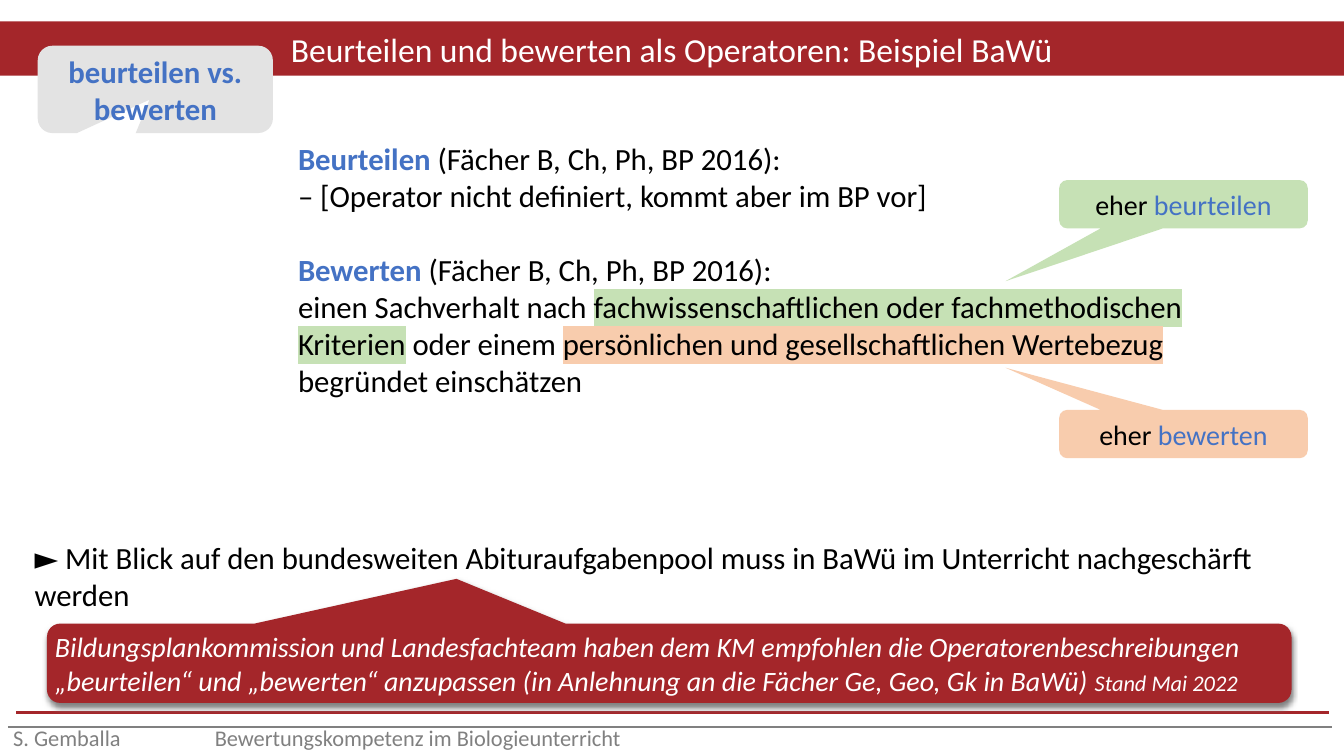
"""Build the slide on the operators beurteilen and bewerten."""
from dataclasses import dataclass
from lxml.etree import SubElement
from pptx import Presentation
from pptx.dml.color import RGBColor
from pptx.enum.shapes import MSO_CONNECTOR, MSO_SHAPE
from pptx.enum.text import MSO_ANCHOR, PP_ALIGN
from pptx.oxml import parse_xml
from pptx.oxml.ns import nsdecls, qn
from pptx.util import Pt


@dataclass(frozen=True)
class Theme:
    font: str = "Calibri"
    red: str = "A4262A"
    blue: str = "4472C4"
    green: str = "C6E1B5"
    peach: str = "F8CCAD"
    light: str = "E3E3E3"
    gray: str = "808080"
    black: str = "000000"
    white: str = "FFFFFF"
    title: float = 18
    body: float = 16.5
    label: float = 15
    small: float = 12


@dataclass(frozen=True)
class Piece:
    text: str
    color: str = Theme.black
    bold: bool = False
    italic: bool = False
    mark: str = ""
    size: float = 0


class Painter:
    def __init__(self, slide, theme):
        self.slide = slide
        self.theme = theme

    def style(self, run, piece, size):
        font = run.font
        font.name = self.theme.font
        font.size = Pt(piece.size or size)
        font.bold, font.italic = piece.bold, piece.italic
        font.color.rgb = RGBColor.from_string(piece.color)
        if piece.mark:
            fill = run._r.rPr.find(qn("a:solidFill"))
            fill.addnext(parse_xml(
                f'<a:highlight {nsdecls("a")}><a:srgbClr val="{piece.mark}"/></a:highlight>'))

    def letter(self, par, pieces, size, align=PP_ALIGN.LEFT):
        par.alignment = align
        par.text = pieces[0].text
        for piece in pieces[1:]:
            par.add_run().text = piece.text
        for run, piece in zip(par.runs, pieces):
            self.style(run, piece, size)

    def text(self, box, rows, size):
        frame = self.slide.shapes.add_textbox(*map(Pt, box)).text_frame
        frame.word_wrap = True
        for i, row in enumerate(rows):
            par = frame.add_paragraph() if i else frame.paragraphs[0]
            self.letter(par, row, size)
        return frame

    def block(self, kind, box, fill, pieces, size, align=PP_ALIGN.CENTER):
        shape = self.slide.shapes.add_shape(kind, *map(Pt, box))
        shape.shadow.inherit = False
        shape.fill.solid()
        shape.fill.fore_color.rgb = RGBColor.from_string(fill)
        shape.line.fill.background()
        shape.text_frame.vertical_anchor = MSO_ANCHOR.MIDDLE
        self.letter(shape.text_frame.paragraphs[0], pieces, size, align)
        return shape

    def callout(self, box, tip, *args):
        shape = self.block(MSO_SHAPE.ROUNDED_RECTANGULAR_CALLOUT, box, *args)
        shape.adjustments[0], shape.adjustments[1] = tip
        return shape

    def shade(self, shape):
        effect = shape._element.spPr.find(qn("a:effectLst"))
        effect.append(parse_xml(
            f'<a:outerShdw {nsdecls("a")} blurRad="{Pt(3.1)}" dist="{Pt(1.8)}" '
            f'dir="5400000" rotWithShape="0"><a:srgbClr val="{self.theme.gray}"/></a:outerShdw>'))

    def pad(self, frame, gap):
        frame.margin_left = frame.margin_right = Pt(gap)
        frame.margin_top = frame.margin_bottom = Pt(gap)

    def rule(self, left, right, y, color, width):
        line = self.slide.shapes.add_connector(
            MSO_CONNECTOR.STRAIGHT, Pt(left), Pt(y), Pt(right), Pt(y))
        line.line.color.rgb = RGBColor.from_string(color)
        line.line.width = Pt(width)
        SubElement(line._element.spPr, qn("a:effectLst"))

    def tab(self, par, pos):
        props = par._p.get_or_add_pPr()
        stops = SubElement(props, qn("a:tabLst"))
        SubElement(stops, qn("a:tab"), pos=str(Pt(pos)), algn="l")


def main():
    deck = Presentation()
    deck.slide_width, deck.slide_height = Pt(720), Pt(405)
    look = Theme()
    art = Painter(deck.slides.add_slide(deck.slide_layouts[6]), look)

    footer = art.text((0, 384.5, 720, 36), [
        [Piece("S. Gemballa\tBewertungskompetenz im Biologieunterricht", look.gray)],
    ], look.small)
    art.tab(footer.paragraphs[0], 108)
    art.rule(4.3, 713.5, 389.5, look.gray, 1)

    art.block(MSO_SHAPE.RECTANGLE, (0, 11.5, 720, 29), look.red, [
        Piece("Beurteilen und bewerten als Operatoren: Beispiel BaWü", look.white),
    ], look.title)

    source = Piece("(Fächer B, Ch, Ph, BP 2016):")
    body = art.text((152.6, 71.3, 511.2, 146.9), [
        [Piece("Beurteilen ", look.blue, bold=True), source],
        [Piece("– [Operator nicht definiert, kommt aber im BP vor]")],
        [Piece("Bewerten ", look.blue, bold=True), source],
        [Piece("einen Sachverhalt nach "),
         Piece("fachwissenschaftlichen oder fachmethodischen Kriterien", mark=look.green),
         Piece(" oder einem "),
         Piece("persönlichen und gesellschaftlichen Wertebezug ", mark=look.peach),
         Piece("begründet einschätzen")],
    ], look.body)
    body.paragraphs[2].space_before = Pt(20)

    for word, top, tip, fill in (
        ("beurteilen", 96.5, 1.591, look.green),
        ("bewerten", 219.6, -1.371, look.peach),
    ):
        art.callout((567.4, top, 133.2, 25.9), (-0.716, tip), fill,
                    [Piece("eher "), Piece(word, look.blue)], look.label)

    art.text((11.5, 285.1, 680.4, 47.5), [
        [Piece("► Mit Blick auf den bundesweiten Abituraufgabenpool muss in BaWü "
               "im Unterricht nachgeschärft werden")],
    ], look.body)
    art.callout((20.2, 24.5, 126, 46.8), (-0.025, 0.119), look.light,
                [Piece("beurteilen vs. bewerten", look.blue, bold=True)], look.body)
    art.rule(8.6, 712, 381.6, look.red, 1.5)

    advice = art.callout((25.2, 334.1, 666.7, 42.5), (-0.171, -1.065), look.red, [
        Piece("Bildungsplankommission und Landesfachteam haben dem KM empfohlen die "
              "Operatorenbeschreibungen „beurteilen“ und „bewerten“ anzupassen "
              "(in Anlehnung an die Fächer Ge, Geo, Gk in BaWü) ", look.white, italic=True),
        Piece("Stand Mai 2022", look.white, italic=True, size=look.small),
    ], look.label, PP_ALIGN.LEFT)
    art.pad(advice.text_frame, 2.2)
    art.shade(advice)

    deck.save("out.pptx")


if __name__ == "__main__":
    main()
